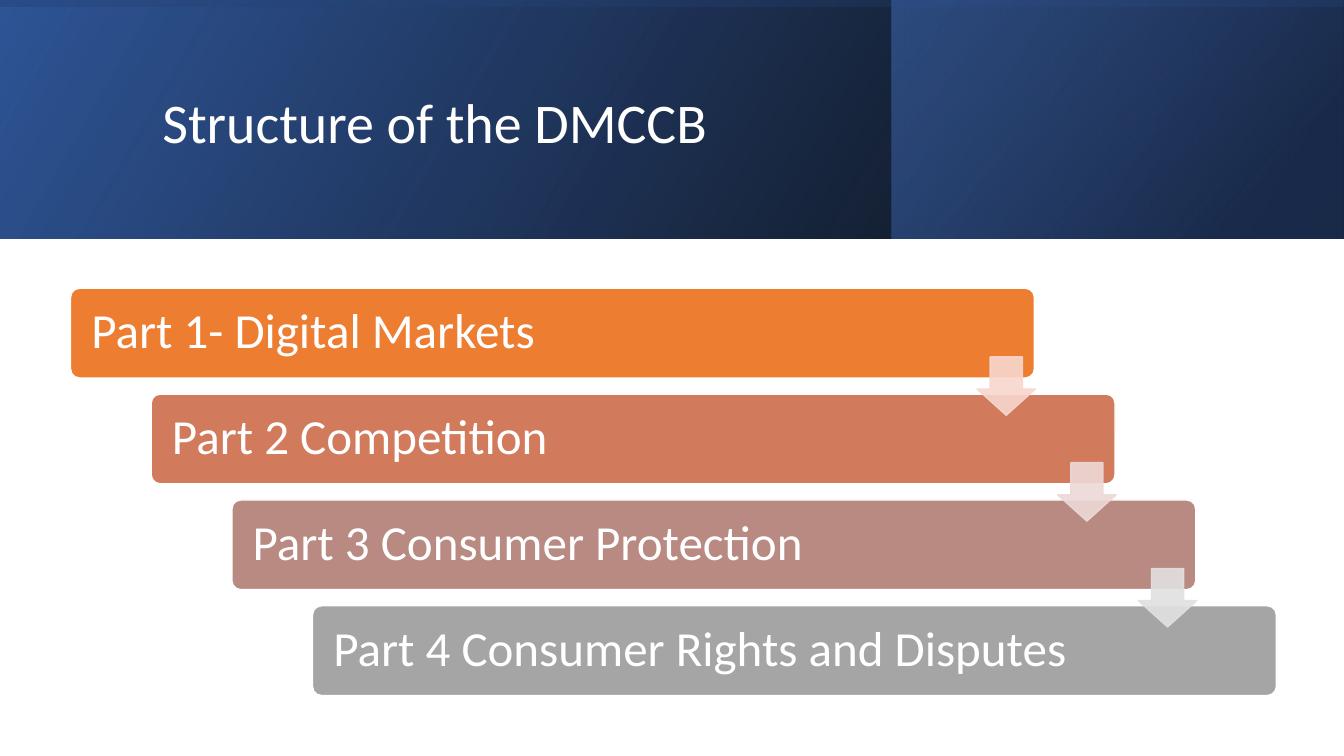
from pptx import Presentation
from pptx import util as u
from pptx.dml.color import RGBColor
from pptx.enum import shapes, text
from pptx.oxml.ns import qn
from lxml import etree

COLORS = {
    "white": "FFFFFF", "black": "000000", "navy": "203864",
    "blue": "2F5597", "sky": "4472C4",
    "orange": "ED7D31", "terracotta": "D17B5C", "rose": "B98A82", "grey": "A5A5A5",
    "peach": "F8D7CE", "blush": "EDD9D7", "silver": "E1E1E1",
}


class SlideBuilder:
    font = "Calibri"

    def __init__(self, presentation):
        self.slide = presentation.slides.add_slide(presentation.slide_layouts[5])

    def color(self, name):
        return RGBColor.from_string(COLORS[name])

    def shape(self, kind, box, adjustments=()):
        shape = self.slide.shapes.add_shape(kind, *map(u.Inches, box))
        shape.shadow.inherit = False
        for index, value in enumerate(adjustments):
            shape.adjustments[index] = value
        return shape

    def paint(self, shape, fill, line):
        shape.fill.solid()
        shape.fill.fore_color.rgb = self.color(fill)
        shape.line.color.rgb = self.color(line)
        shape.line.width = u.Pt(1)

    def set_opacity(self, shape, percents):
        color_elements = list(shape._element.spPr.iter(qn("a:srgbClr")))
        for element, percent in zip(color_elements, percents):
            etree.SubElement(element, qn("a:alpha")).set("val", str(percent * 1000))

    def add_text(self, shape, words, size, margin=0.1):
        frame = shape.text_frame
        frame.word_wrap = True
        frame.auto_size = text.MSO_AUTO_SIZE.NONE
        frame.vertical_anchor = text.MSO_ANCHOR.MIDDLE
        frame.margin_left = frame.margin_right = u.Inches(margin)
        paragraph = frame.paragraphs[0]
        paragraph.alignment = text.PP_ALIGN.LEFT
        paragraph.line_spacing = 0.9
        run = paragraph.add_run()
        run.text = words
        run.font.name = self.font
        run.font.size = u.Pt(size)
        run.font.color.rgb = self.color("white")

    def gradient_band(self, box, angle, stops, rotation=0):
        """Mirrored rectangle; stops are (position, colour, opacity) in percent."""
        band = self.shape(shapes.MSO_SHAPE.RECTANGLE, box)
        band.rotation = rotation
        band._element.spPr.get_or_add_xfrm().set("flipH", "1")
        band.line.fill.background()
        band.fill.gradient()
        band.fill.gradient_angle = 360 - angle
        for stop, (position, name, _) in zip(band.fill.gradient_stops, stops):
            stop.position = position / 100
            stop.color.rgb = self.color(name)
        self.set_opacity(band, [opacity for _, _, opacity in stops])

    def title(self, words, box):
        title = self.slide.shapes.title
        title.left, title.top, title.width, title.height = map(u.Inches, box)
        self.add_text(title, words, 40)
        # Bring the title in front of the header bands
        self.slide.shapes._spTree.append(title._element)

    def bar(self, words, name, box):
        bar = self.shape(shapes.MSO_SHAPE.ROUNDED_RECTANGLE, box, [0.1])
        self.paint(bar, name, "white")
        self.add_text(bar, words, 35, 0.18)

    def arrow(self, name, box):
        arrow = self.shape(shapes.MSO_SHAPE.DOWN_ARROW, box, [0.55, 0.45])
        self.paint(arrow, name, name)
        self.set_opacity(arrow, [90, 90])


def main():
    presentation = Presentation()
    presentation.slide_width = u.Inches(13.33)
    presentation.slide_height = u.Inches(7.5)
    builder = SlideBuilder(presentation)

    # Header bands and title
    builder.gradient_band((0, 0, 13.33, 2.37), 330,
                          [(0, "black", 96), (100, "blue", 100)])
    builder.gradient_band((8.84, 0, 4.48, 2.37), 320,
                          [(19, "navy", 68), (100, "sky", 48)])
    builder.gradient_band((5.48, -5.48, 2.37, 13.33), 350,
                          [(23, "blue", 16), (99, "black", 45)], rotation=270)
    builder.title("Structure of the DMCCB", (1.51, 0.38, 10.63, 1.72))

    # Staircase of parts
    step_x, step_y = 0.8, 1.05
    parts = [
        ("Part 1- Digital Markets", "orange"),
        ("Part 2 Competition", "terracotta"),
        ("Part 3 Consumer Protection", "rose"),
        ("Part 4 Consumer Rights and Disputes", "grey"),
    ]
    for index, (words, name) in enumerate(parts):
        builder.bar(words, name, (0.7 + index * step_x, 2.86 + index * step_y, 9.56, 0.89))

    # Arrows from each part to the next
    for index, name in enumerate(["peach", "blush", "silver"]):
        builder.arrow(name, (9.69 + index * step_x, 3.54 + index * step_y, 0.58, 0.58))

    presentation.save("out.pptx")


if __name__ == "__main__":
    main()
